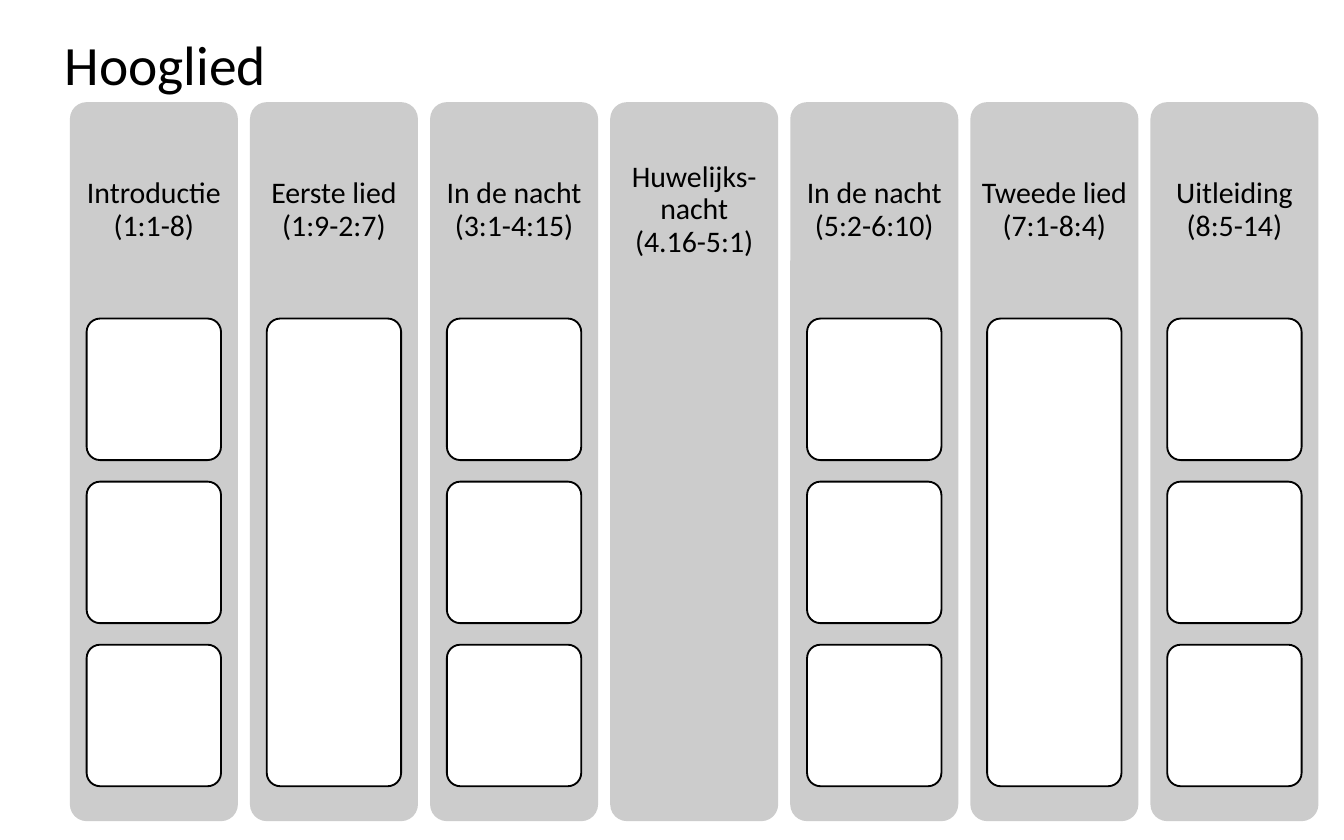
from typing import NamedTuple

from pptx import Presentation
from pptx.dml.color import RGBColor
from pptx.enum import shapes, text
from pptx.util import Inches, Pt

FONT, BLACK, WHITE, GREY = "Calibri", "000000", "FFFFFF", "CCCCCC"

COLUMN_LEFT, COLUMN_TOP, COLUMN_PITCH = 0.52, 0.76, 1.34
COLUMN_W, COLUMN_H, HEADER_H = 1.25, 5.35, 1.61
BOX_TOP, BOX_W, BOXES_H, BOX_GAP = 2.37, 1.0, 3.48, 0.16


class Section(NamedTuple):
    name: str
    verses: str
    boxes: int


SECTIONS = [
    Section("Introductie", "(1:1-8)", 3),
    Section("Eerste lied", "(1:9-2:7)", 1),
    Section("In de nacht", "(3:1-4:15)", 3),
    Section("Huwelijks-nacht", "(4.16-5:1)", 0),
    Section("In de nacht", "(5:2-6:10)", 3),
    Section("Tweede lied", "(7:1-8:4)", 1),
    Section("Uitleiding", "(8:5-14)", 3),
]


def rgb(value: str) -> RGBColor:
    return RGBColor.from_string(value)


def add_card(s, x: float, y: float, w: float, h: float,
             fill: str, line: str | None = None) -> None:
    sp = s.shapes.add_shape(shapes.MSO_SHAPE.ROUNDED_RECTANGLE,
                            Inches(x), Inches(y), Inches(w), Inches(h))
    sp.adjustments[0] = 0.1
    sp.shadow.inherit = False
    sp.fill.solid()
    sp.fill.fore_color.rgb = rgb(fill)
    if line:
        sp.line.color.rgb = rgb(line)
        sp.line.width = Pt(1)
    else:
        sp.line.fill.background()


def add_text(s, x: float, y: float, w: float, h: float, content: str, size: float,
             align: text.PP_ALIGN, margin_x: float, margin_y: float) -> None:
    sp = s.shapes.add_textbox(Inches(x), Inches(y), Inches(w), Inches(h))
    tf = sp.text_frame
    tf.word_wrap = True
    tf.vertical_anchor = text.MSO_ANCHOR.MIDDLE
    tf.margin_left = tf.margin_right = Inches(margin_x)
    tf.margin_top = tf.margin_bottom = Inches(margin_y)
    p = tf.paragraphs[0]
    p.text = content
    p.alignment = align
    p.line_spacing = 0.9
    p.font.name = FONT
    p.font.size = Pt(size)
    p.font.color.rgb = rgb(BLACK)


def add_section(s, x: float, section: Section) -> None:
    add_card(s, x, COLUMN_TOP, COLUMN_W, COLUMN_H, GREY)
    add_text(s, x, COLUMN_TOP, COLUMN_W, HEADER_H, f"{section.name}\n{section.verses}",
             16, text.PP_ALIGN.CENTER, 0.07, 0.07)
    box_x = x + (COLUMN_W - BOX_W) / 2
    for i in range(section.boxes):
        box_h = (BOXES_H - (section.boxes - 1) * BOX_GAP) / section.boxes
        add_card(s, box_x, BOX_TOP + i * (box_h + BOX_GAP), BOX_W, box_h, WHITE, BLACK)


def main() -> None:
    prs = Presentation()
    prs.slide_width, prs.slide_height = Inches(10), Inches(6.25)
    s = prs.slides.add_slide(prs.slide_layouts[6])
    for i, section in enumerate(SECTIONS):
        add_section(s, COLUMN_LEFT + i * COLUMN_PITCH, section)
    add_text(s, 0.43, 0.25, 8.62, 0.51, "Hooglied", 29.7, text.PP_ALIGN.LEFT, 0.05, 0.03)
    prs.save("out.pptx")


if __name__ == "__main__":
    main()
